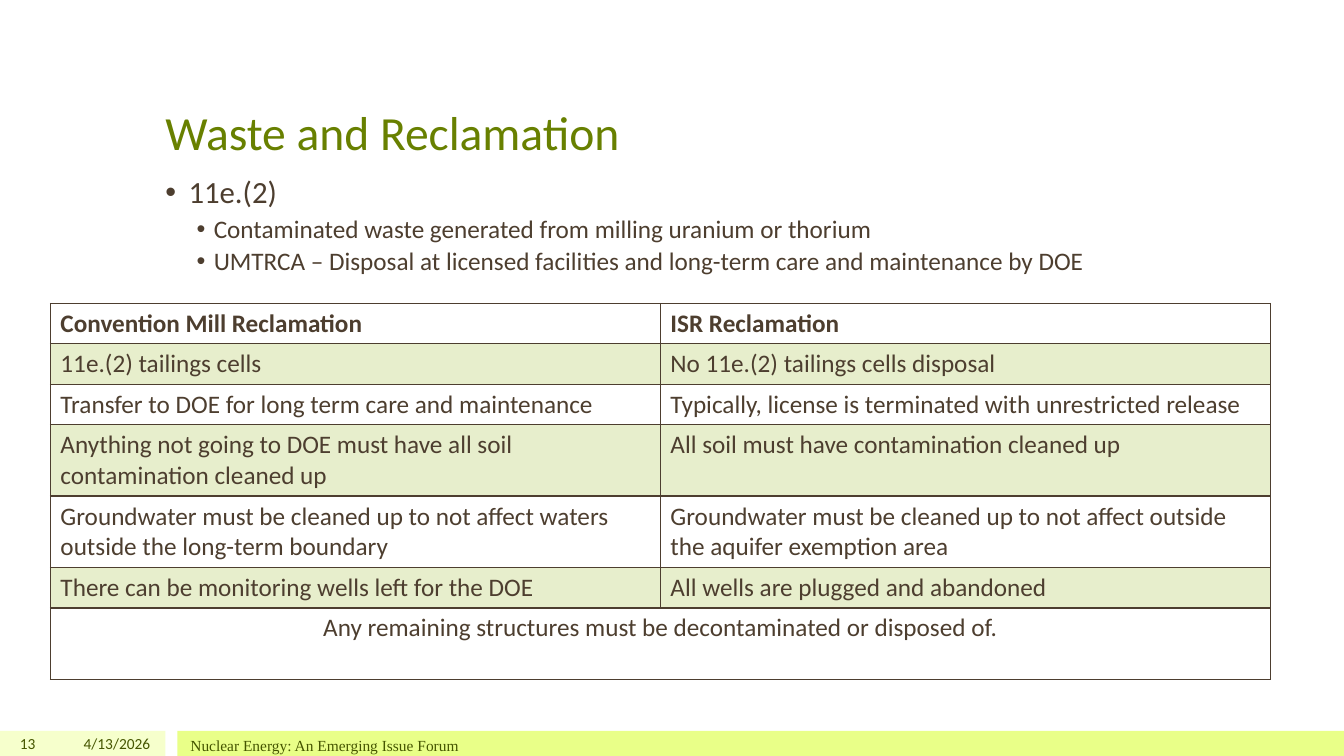
import pptx
import pptx.util
import pptx.dml.color
import pptx.enum.shapes
import pptx.enum.text
import pptx.oxml
import pptx.oxml.ns
from lxml import etree

Inches = pptx.util.Inches
ALIGN = pptx.enum.text.PP_ALIGN
ANCHOR = pptx.enum.text.MSO_ANCHOR


class Theme:
    sans, serif = "Calibri", "Times New Roman"
    title, text, footer = "688000", "4D3E2F", "455500"
    band, pale_bar, bright_bar = "8BAA00", "F6FFCC", "E9FF88"
    title_size, lead_size, text_size, footer_size = 34, 22, 18, 11
    band_alpha = 20


BULLETS = [
    (0, "11e.(2)"),
    (1, "Contaminated waste generated from milling uranium or thorium"),
    (1, "UMTRCA – Disposal at licensed facilities and long-term care and maintenance by DOE"),
]
# Indent, hanging, space before and size for each list level
LEVELS = [(0.23, 0.23, 11, Theme.lead_size), (0.48, 0.17, 4, Theme.text_size)]

RECLAMATION = [
    (0.4, "Convention Mill Reclamation", "ISR Reclamation"),
    (0.4, "11e.(2) tailings cells", "No 11e.(2) tailings cells disposal"),
    (0.4, "Transfer to DOE for long term care and maintenance",
     "Typically, license is terminated with unrestricted release"),
    (0.71, "Anything not going to DOE must have all soil contamination cleaned up",
     "All soil must have contamination cleaned up"),
    (0.71, "Groundwater must be cleaned up to not affect waters outside the long-term boundary",
     "Groundwater must be cleaned up to not affect outside the aquifer exemption area"),
    (0.4, "There can be monitoring wells left for the DOE", "All wells are plugged and abandoned"),
    (0.71, "Any remaining structures must be decontaminated or disposed of."),
]


def colour(value):
    return pptx.dml.color.RGBColor.from_string(value)


def apply(target, values):
    for name, value in values.items():
        setattr(target, name, value)


def place(shape, box):
    apply(shape, dict(zip(("left", "top", "width", "height"), map(Inches, box))))


def write(para, text, size, ink, font=Theme.sans, bold=False, **layout):
    apply(para, layout)
    span = para.add_run()
    span.text = text
    apply(span.font, {"name": font, "size": pptx.util.Pt(size), "bold": bold})
    span.font.color.rgb = colour(ink)


def add_title(slide, box):
    title = slide.shapes.title
    place(title, box)
    frame = title.text_frame
    apply(frame, {"auto_size": pptx.enum.text.MSO_AUTO_SIZE.NONE,
                  "vertical_anchor": ANCHOR.BOTTOM, "margin_bottom": 0})
    write(frame.paragraphs[0], "Waste and Reclamation", Theme.title_size, Theme.title,
          alignment=ALIGN.LEFT)


def add_bullets(slide, box):
    body = slide.placeholders[1]
    place(body, box)
    frame = body.text_frame
    frame.auto_size = pptx.enum.text.MSO_AUTO_SIZE.NONE
    for number, (level, text) in enumerate(BULLETS):
        para = frame.add_paragraph() if number else frame.paragraphs[0]
        indent, hanging, before, size = LEVELS[level]
        properties = para._p.get_or_add_pPr()
        properties.set("marL", str(Inches(indent)))
        properties.set("indent", str(-Inches(hanging)))
        for tag, key, value in (("a:buFont", "typeface", "Arial"), ("a:buChar", "char", "•")):
            etree.SubElement(properties, pptx.oxml.ns.qn(tag)).set(key, value)
        write(para, text, size, Theme.text, level=level, line_spacing=0.9,
              space_before=pptx.util.Pt(before if number else 0))


def style_cell(cell, banded):
    # Borders come before the fill in the cell properties
    properties = cell._tc.get_or_add_tcPr()
    for side in "LRTB":
        properties.append(pptx.oxml.parse_xml(
            f'<a:ln{side} {pptx.oxml.ns.nsdecls("a")} w="12700"><a:solidFill>'
            f'<a:srgbClr val="{Theme.text}"/></a:solidFill></a:ln{side}>'))
    if not banded:
        cell.fill.background()
        return
    cell.fill.solid()
    cell.fill.fore_color.rgb = colour(Theme.band)
    tint = properties.find(".//" + pptx.oxml.ns.qn("a:solidFill") + "/"
                           + pptx.oxml.ns.qn(f"a:srgbClr") + f"[@val='{Theme.band}']")
    etree.SubElement(tint, pptx.oxml.ns.qn("a:alpha")).set("val", str(Theme.band_alpha * 1000))


def add_reclamation_table(slide, box):
    table = slide.shapes.add_table(len(RECLAMATION), 2, *map(Inches, box)).table
    apply(table, {"first_row": False, "horz_banding": False})
    for number, (height, *texts) in enumerate(RECLAMATION):
        table.rows[number].height = Inches(height)
        for cell in table.rows[number].cells:
            style_cell(cell, banded=number % 2 == 1)
        merged = len(texts) == 1
        if merged:
            table.cell(number, 0).merge(table.cell(number, 1))
        for column, text in enumerate(texts):
            write(table.cell(number, column).text_frame.paragraphs[0], text,
                  Theme.text_size, Theme.text, bold=number == 0,
                  alignment=ALIGN.CENTER if merged else ALIGN.LEFT)


def add_footer(slide, box):
    left, top, width, height = box
    # Coloured bars
    for start, end, fill in ((0, 1.64, Theme.pale_bar), (1.76, width, Theme.bright_bar)):
        bar = slide.shapes.add_shape(pptx.enum.shapes.MSO_SHAPE.RECTANGLE,
                                     *map(Inches, (left + start, top, end - start, height)))
        bar.shadow.inherit = False
        bar.fill.solid()
        bar.fill.fore_color.rgb = colour(fill)
        bar.line.fill.background()
    # Slide number, date and forum name
    for start, length, text, font, layout in (
            (0, 0.45, "13", Theme.sans, {"alignment": ALIGN.RIGHT}),
            (0.5, 1.09, "4/13/2026", Theme.sans, {"alignment": ALIGN.RIGHT}),
            (1.79, 10, "Nuclear Energy: An Emerging Issue Forum", Theme.serif,
             {"line_spacing": 1.2})):
        label = slide.shapes.add_textbox(*map(Inches, (left + start, top, length, height)))
        apply(label.text_frame, {"word_wrap": True, "vertical_anchor": ANCHOR.MIDDLE})
        write(label.text_frame.paragraphs[0], text, Theme.footer_size, Theme.footer,
              font, **layout)


def main():
    deck = pptx.Presentation()
    apply(deck, {"slide_width": Inches(13.33), "slide_height": Inches(7.5)})
    slide = deck.slides.add_slide(deck.slide_layouts[1])
    add_footer(slide, (0, 7.25, 13.33, 0.25))
    add_title(slide, (1.54, 0.3, 10.25, 1.29))
    add_bullets(slide, (1.54, 1.71, 10.25, 1.29))
    add_reclamation_table(slide, (0.5, 3.01, 12.1, 3.72))
    deck.save("out.pptx")


if __name__ == "__main__":
    main()
